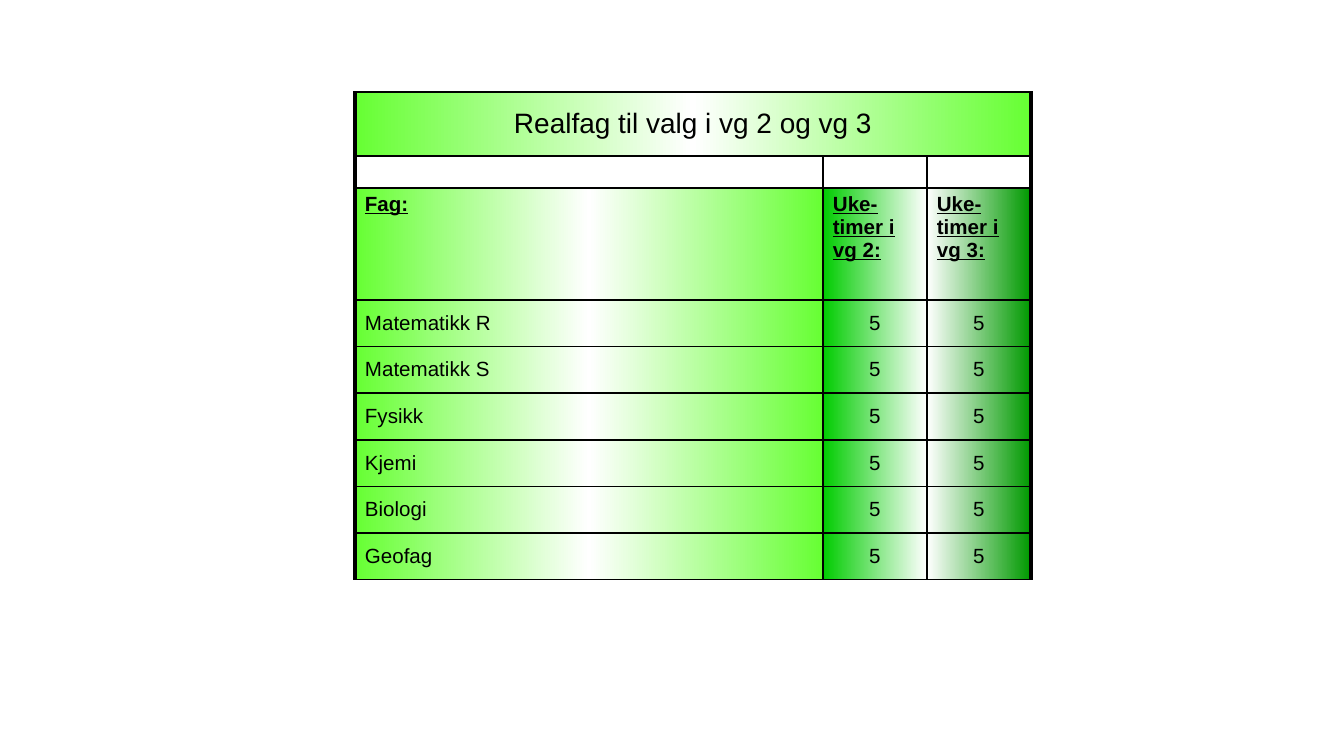
from dataclasses import dataclass

from lxml.etree import SubElement
from pptx import Presentation
from pptx.dml.color import RGBColor
from pptx.enum.text import MSO_ANCHOR as Anchor, PP_ALIGN as Align
from pptx.oxml.ns import qn
from pptx.util import Pt

PX = 914400 / 134.4


def px(length):
    return round(length * PX)


@dataclass(frozen=True)
class Theme:
    font: str = "Arial"
    ink: str = "000000"
    title_size: int = 15
    body_size: int = 11
    spacer_size: int = 8
    thin: float = 1
    thick: float = 2.25
    subject_fill: tuple = ("66FF33", "FFFFFF", "66FF33")
    vg2_fill: tuple = ("00CC00", "FFFFFF")
    vg3_fill: tuple = ("FFFFFF", "009900")


THEME = Theme()
TITLE = "Realfag til valg i vg 2 og vg 3"
HEADINGS = ["Fag:", "Uke-timer i vg 2:", "Uke-timer i vg 3:"]
SUBJECTS = ["Matematikk R", "Matematikk S", "Fysikk", "Kjemi", "Biologi", "Geofag"]
WEEKLY_HOURS = "5"
COLUMN_FILLS = [THEME.subject_fill, THEME.vg2_fill, THEME.vg3_fill]
MARGINS = {"margin_left": px(10), "margin_right": px(10),
           "margin_top": px(5), "margin_bottom": px(5)}


def add_colour(parent, colour):
    SubElement(parent, qn("a:srgbClr"), val=colour)


def draw_borders(cell, left, right):
    """Thick lines on the table's sides, thin lines everywhere else."""
    properties = cell._tc.get_or_add_tcPr()
    widths = {"L": left, "R": right, "T": THEME.thin, "B": THEME.thin}
    for side, width in widths.items():
        line = SubElement(properties, qn(f"a:ln{side}"), w=str(Pt(width)))
        add_colour(SubElement(line, qn("a:solidFill")), THEME.ink)


def fill_gradient(cell, colours):
    """Left-to-right gradient with evenly spaced stops."""
    gradient = SubElement(cell._tc.get_or_add_tcPr(), qn("a:gradFill"), rotWithShape="1")
    stops = SubElement(gradient, qn("a:gsLst"))
    for i, colour in enumerate(colours):
        position = 100000 * i // (len(colours) - 1)
        add_colour(SubElement(stops, qn("a:gs"), pos=str(position)), colour)
    SubElement(gradient, qn("a:lin"), ang="0", scaled="1")


def write(cell, text, size, align=Align.LEFT, anchor=Anchor.MIDDLE, strong=False):
    cell.vertical_anchor = anchor
    paragraph = cell.text_frame.paragraphs[0]
    paragraph.alignment = align
    run = paragraph.add_run()
    run.text = text
    formats = {"name": THEME.font, "size": Pt(size), "bold": strong, "underline": strong}
    for name, value in formats.items():
        setattr(run.font, name, value)
    run.font.color.rgb = RGBColor.from_string(THEME.ink)


def add_subject_table(slide, left, top, width, height):
    title_height, spacer_height, heading_height, hours_width = 64, 32, 112, 104
    subject_height = (height - title_height - spacer_height - heading_height) / len(SUBJECTS)
    row_heights = [title_height, spacer_height, heading_height]
    row_heights += [subject_height] * len(SUBJECTS)
    column_widths = [width - 2 * hours_width, hours_width, hours_width]

    table = slide.shapes.add_table(len(row_heights), len(column_widths), px(left), px(top),
                                   px(width), px(height)).table
    table.first_row = table.horz_banding = False
    for row, row_height in zip(table.rows, row_heights):
        row.height = px(row_height)
    for column, column_width in zip(table.columns, column_widths):
        column.width = px(column_width)
    for cell in table.iter_cells():
        for name, value in MARGINS.items():
            setattr(cell, name, value)

    # Title across all columns
    title = table.cell(0, 0)
    title.merge(table.cell(0, 2))
    draw_borders(title, THEME.thick, THEME.thick)
    fill_gradient(title, THEME.subject_fill)
    write(title, TITLE, THEME.title_size, Align.CENTER)

    for c, colours in enumerate(COLUMN_FILLS):
        for r in range(1, len(row_heights)):
            cell = table.cell(r, c)
            draw_borders(cell, THEME.thick if c == 0 else THEME.thin,
                         THEME.thick if c == 2 else THEME.thin)
            if r == 1:  # Empty spacer row
                cell.fill.background()
                SubElement(cell.text_frame.paragraphs[0]._p, qn("a:endParaRPr"),
                           sz=str(THEME.spacer_size * 100))
                continue
            fill_gradient(cell, colours)
            if r == 2:  # Column headings
                write(cell, HEADINGS[c], THEME.body_size, anchor=Anchor.TOP, strong=True)
            elif c == 0:  # Subject names
                write(cell, SUBJECTS[r - 3], THEME.body_size)
            else:  # Weekly hours
                write(cell, WEEKLY_HOURS, THEME.body_size, Align.CENTER)


def main():
    deck = Presentation()
    deck.slide_width, deck.slide_height = px(1344), px(756)
    slide = deck.slides.add_slide(deck.slide_layouts[6])
    add_subject_table(slide, 355, 92, 676, 488)
    deck.save("out.pptx")


if __name__ == "__main__":
    main()
